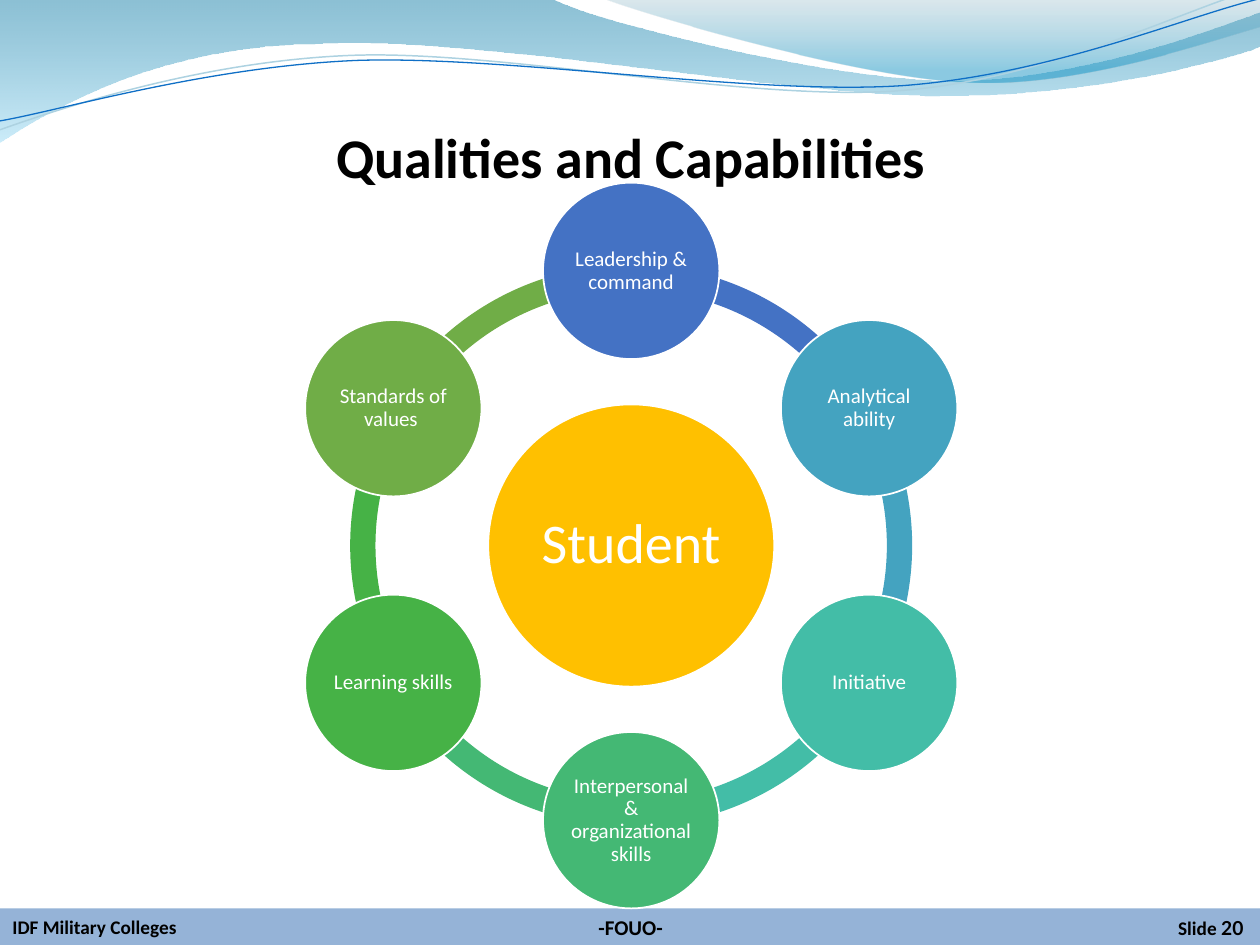
from dataclasses import dataclass
from math import cos, radians, sin

from lxml import etree
from pptx import Presentation
from pptx.dml.color import RGBColor
from pptx.enum.shapes import MSO_SHAPE
from pptx.enum.text import MSO_ANCHOR, PP_ALIGN
from pptx.oxml.ns import qn
from pptx.util import Inches, Pt

OVAL, ARC, RECT = MSO_SHAPE.OVAL, MSO_SHAPE.BLOCK_ARC, MSO_SHAPE.RECTANGLE
LEFT, MID, RIGHT = PP_ALIGN.LEFT, PP_ALIGN.CENTER, PP_ALIGN.RIGHT


@dataclass(frozen=True)
class Theme:
    font: str = "Calibri"
    digits: str = "Lato"
    ink: str = "000000"
    white: str = "FFFFFF"
    bar: str = "95B3D7"
    hub: str = "FFC000"
    pale: str = "ADD2E1"
    blue: str = "0F6FC6"
    big: int = 32
    label: int = 12
    small: int = 11


THEME = Theme()

# Ring: label and colour, clockwise from the top
NODES = [
    ("Leadership & command", "4472C4"),
    ("Analytical ability", "44A3C0"),
    ("Initiative", "43BDA7"),
    ("Interpersonal & organizational skills", "44B874"),
    ("Learning skills", "46B246"),
    ("Standards of values ", "70AD47"),
]
CX, CY = 5.01, 4.33
ORBIT, RING, NODE = 2.18, 4.46, 1.4

# Waves: each row is a line end, or a curve's two handles and its end
WAVES = [
    ([(-0.01, 0), (4.39, 0), (4.75, 0.18, 6.62, 0.64, 7.57, 0.64),
      (8.52, 0.64, 9.57, 0.26, 9.99, 0.1), (10, 0.37),
      (9.82, 0.45, 8.69, 0.77, 7.45, 0.76),
      (6.21, 0.76, 3.81, 0.29, 2.56, 0.35),
      (1.28, 0.36, 0.45, 0.84, -0.02, 1.14), (-0.01, 0)],
     [(0, "0074A1", 45), (1, "A3DEF6", 55)]),
    ([(4.79, -0.01), (5.09, 0.11, 6.82, 0.62, 7.69, 0.65),
      (8.56, 0.69, 9.61, 0.32, 10, 0.21), (10, 0), (4.79, -0.01)],
     [(0, "8AB3C3", 30), (0.8, "008BBF", 45)]),
]
TILT = -2.7
STRANDS = [
    ([(0, 1.03), (0.48, 0.86, 1.58, 0.49, 2.77, 0.44),
      (3.95, 0.39, 5.93, 0.81, 7.13, 0.72),
      (8.33, 0.63, 9.38, 0.08, 9.98, -0.09)], (4.99, 0.5), THEME.pale, 0.85),
    ([(0, 0.96), (0.47, 0.88, 1.64, 0.53, 2.83, 0.48),
      (4.03, 0.44, 5.97, 0.76, 7.17, 0.68),
      (8.36, 0.59, 9.41, 0.13, 10, -0.01)], (5, 0.52), THEME.blue, 0.75),
]


def rgb(code):
    return RGBColor.from_string(code)


def turn(row, hub, angle):
    """Turn the points of a row clockwise about a hub."""
    c, s = cos(radians(angle)), sin(radians(angle))
    x0, y0 = hub
    out = []
    for x, y in zip(row[::2], row[1::2]):
        out += [x0 + (x - x0) * c - (y - y0) * s,
                y0 + (x - x0) * s + (y - y0) * c]
    return out


def add_path(slide, rows, close=False):
    """Draw rows of lines and cubic curves as one outline."""
    pts = [(Inches(x), Inches(y))
           for row in rows for x, y in zip(row[::2], row[1::2])]
    pen = slide.shapes.build_freeform(*pts[0])
    pen.add_line_segments(pts[1:], close=close)
    shape = pen.convert_to_shape()
    shape.shadow.inherit = False
    # Join each curve's three segments into one
    parts = iter(list(shape._element.iter(qn("a:lnTo"))))
    for row in rows[1:]:
        first = next(parts)
        if len(row) == 6:
            first.tag = qn("a:cubicBezTo")
            for _ in range(2):
                part = next(parts)
                first.append(part[0])
                part.getparent().remove(part)
    return shape


def add_wave(slide, rows, stops):
    shape = add_path(slide, rows, True)
    shape.line.fill.background()
    shape.fill.gradient()
    shape.fill.gradient_angle = 270
    for stop, (place, code, _) in zip(shape.fill.gradient_stops, stops):
        stop.position = place
        stop.color.rgb = rgb(code)
    tints = shape._element.spPr.iter(qn("a:srgbClr"))
    for tint, (_, _, alpha) in zip(tints, stops):
        etree.SubElement(tint, qn("a:alpha"), val=str(alpha * 1000))


def add_strand(slide, rows, hub, code, width):
    shape = add_path(slide, [turn(row, hub, -TILT) for row in rows])
    shape.rotation = TILT
    shape.fill.background()
    shape.line.color.rgb = rgb(code)
    shape.line.width = Pt(width)


def add_form(slide, kind, box, fill, line=None):
    shape = slide.shapes.add_shape(kind, *map(Inches, box))
    shape.shadow.inherit = False
    shape.fill.solid()
    shape.fill.fore_color.rgb = rgb(fill)
    if line:
        shape.line.color.rgb = rgb(line)
        shape.line.width = Pt(1)
    else:
        shape.line.fill.background()
    return shape


def write(shape, runs, size, code, align=MID, pad=(0.1, 0.05, 0.1, 0.05),
          bold=False, space=None):
    """Fill a shape with one paragraph of (text, font) runs."""
    frame = shape.text_frame
    frame.word_wrap = True
    frame.vertical_anchor = MSO_ANCHOR.MIDDLE
    (frame.margin_left, frame.margin_top,
     frame.margin_right, frame.margin_bottom) = map(Inches, pad)
    para = frame.paragraphs[0]
    para.alignment = align
    para.line_spacing = space
    for text, font in runs:
        run = para.add_run()
        run.text = text
        run.font.name = font
        run.font.size = Pt(size)
        run.font.bold = bold
        run.font.color.rgb = rgb(code)


def add_text(slide, box, runs, size, **style):
    shape = slide.shapes.add_textbox(*map(Inches, box))
    write(shape, runs, size, THEME.ink, bold=True, **style)


def add_disc(slide, x, y, wide, high, fill, text, size, pad):
    box = (x - wide / 2, y - high / 2, wide, high)
    disc = add_form(slide, OVAL, box, fill, THEME.white)
    write(disc, [(text, THEME.font)], size, THEME.white,
          pad=(pad,) * 4, space=0.9)


def add_ring(slide):
    step = 360 / len(NODES)
    # Arcs lie under the discs, the last one lowest
    box = (CX - RING / 2, CY - RING / 2, RING, RING)
    for n in reversed(range(len(NODES))):
        arc = add_form(slide, ARC, box, NODES[n][1])
        start = 270 + n * step
        # One adjustment unit is 100000, one degree is 60000
        arc.adjustments[0] = start % 360 * 0.6
        arc.adjustments[1] = (start + step) % 360 * 0.6
        arc.adjustments[2] = 0.045
    add_disc(slide, CX, CY, 2.27, 2.24, THEME.hub, "Student", THEME.big, 0.04)
    for n, (text, fill) in enumerate(NODES):
        angle = radians(n * step - 90)
        add_disc(slide, CX + ORBIT * cos(angle), CY + ORBIT * sin(angle),
                 NODE, NODE, fill, text, THEME.label, 0.01)


def main():
    deck = Presentation()
    deck.slide_width, deck.slide_height = Inches(10), Inches(7.5)
    slide = deck.slides.add_slide(deck.slide_layouts[6])
    # Header waves
    for wave in WAVES:
        add_wave(slide, *wave)
    for strand in STRANDS:
        add_strand(slide, *strand)
    # Footer
    font = THEME.font
    add_form(slide, RECT, (0, 7.21, 10, 0.29), THEME.bar)
    add_text(slide, (4.2, 7.21, 1.61, 0.29), [("-FOUO-", font)], THEME.label)
    add_text(slide, (0, 7.21, 2.49, 0.29), [("IDF Military Colleges", font)],
             THEME.small, align=LEFT)
    add_text(slide, (8.1, 7.22, 1.77, 0.28),
             [("Slide ", font), ("20", THEME.digits)],
             THEME.small, align=RIGHT, pad=(0.1, 0.05, 0, 0.05))
    # Title and diagram
    add_text(slide, (1.26, 0.97, 7.5, 0.6),
             [("Qualities and Capabilities", font)], THEME.big,
             pad=(0.07, 0.04, 0.07, 0.04), space=0.9)
    add_ring(slide)
    deck.save("out.pptx")


if __name__ == "__main__":
    main()
